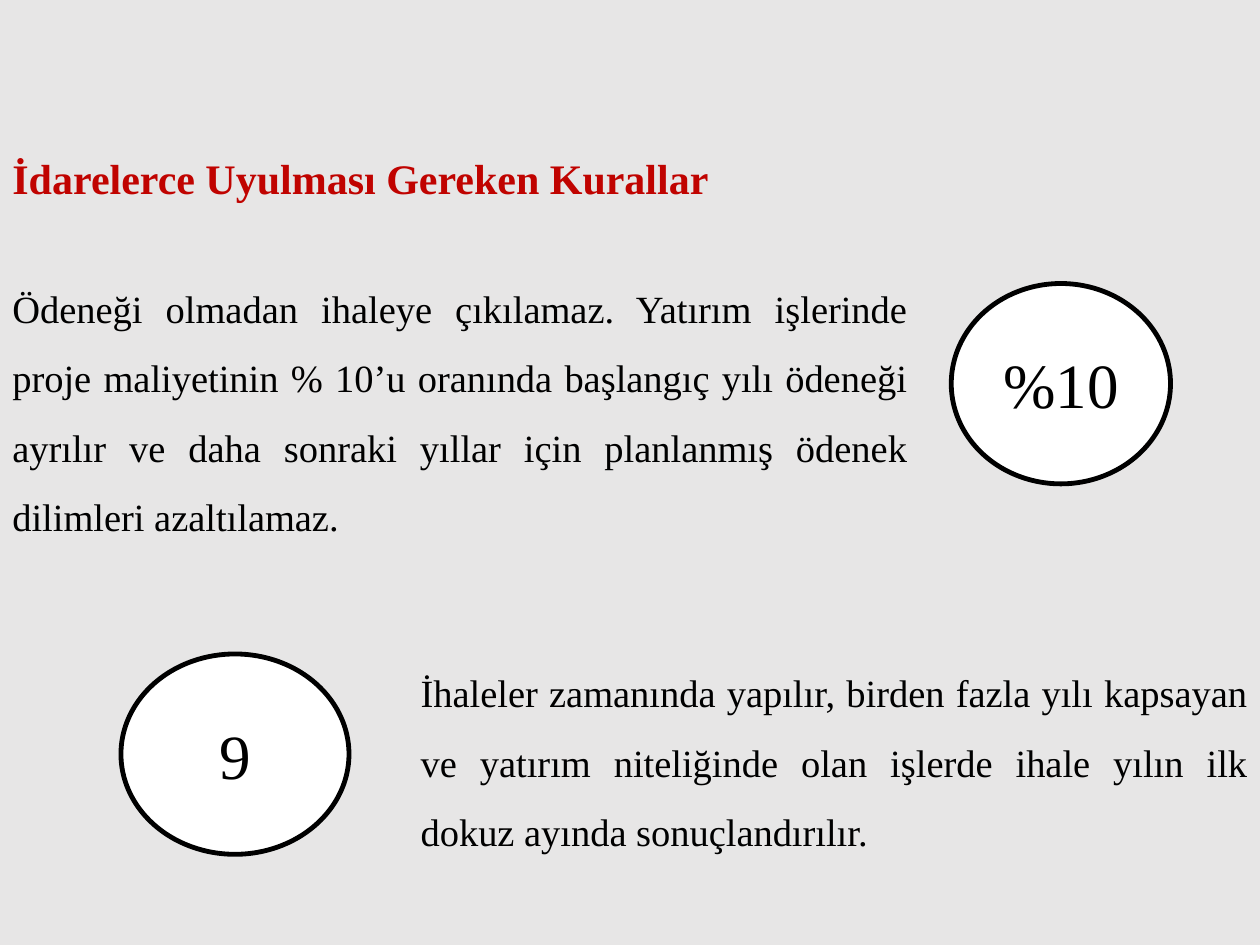
"""Build a slide on the budget and timing rules that public tenders must follow."""
from dataclasses import dataclass

from pptx import Presentation
from pptx import util as u
from pptx.dml.color import RGBColor
from pptx.enum import shapes, text


@dataclass(frozen=True)
class Theme:
    """Colours, font and type sizes of the slide."""
    background: str = "E7E6E6"
    ink: str = "000000"
    accent: str = "C00300"
    badge: str = "FFFFFF"
    font: str = "Times New Roman"
    title_size: float = 24
    body_size: float = 22
    badge_size: float = 36
    outline: float = 2.75


class RuleSlide:
    """Draw titles, rules and badges placed in percent of the slide."""

    def __init__(self, deck, theme):
        """Add a blank slide with the theme background."""
        self.deck, self.theme = deck, theme
        self.slide = deck.slides.add_slide(deck.slide_layouts[6])
        self.paint(self.slide.background.fill, theme.background)

    def paint(self, fill, colour):
        """Give a fill one solid colour."""
        fill.solid()
        fill.fore_color.rgb = RGBColor.from_string(colour)

    def area(self, left, top, width, height):
        """Turn percentages into slide lengths."""
        across, down = self.deck.slide_width, self.deck.slide_height
        return [u.Emu(round(share * side / 100)) for share, side in
                zip((left, top, width, height), (across, down, across, down))]

    def set_wording(self, shape, wording, size, colour, align, anchor, spacing=1.0, bold=False):
        """Fill a shape with one styled paragraph."""
        frame = shape.text_frame
        frame.text = wording
        frame.word_wrap = True
        frame.vertical_anchor = anchor
        paragraph = frame.paragraphs[0]
        paragraph.alignment = align
        paragraph.line_spacing = spacing
        for run in paragraph.runs:
            run.font.name = self.theme.font
            run.font.size = u.Pt(size)
            run.font.bold = bold
            run.font.color.rgb = RGBColor.from_string(colour)

    def title(self, wording, *place):
        """Add the red heading."""
        heading = self.slide.shapes.add_textbox(*self.area(*place))
        self.set_wording(heading, wording, self.theme.title_size, self.theme.accent,
                         text.PP_ALIGN.LEFT, text.MSO_ANCHOR.MIDDLE, 0.9, True)

    def rule(self, wording, *place):
        """Add a justified rule."""
        rule = self.slide.shapes.add_textbox(*self.area(*place))
        self.set_wording(rule, wording, self.theme.body_size, self.theme.ink,
                         text.PP_ALIGN.JUSTIFY, text.MSO_ANCHOR.TOP, 1.5)

    def badge(self, figure, *place):
        """Add an outlined oval holding a key figure."""
        oval = self.slide.shapes.add_shape(shapes.MSO_SHAPE.OVAL, *self.area(*place))
        oval.shadow.inherit = False
        self.paint(oval.fill, self.theme.badge)
        self.paint(oval.line.fill, self.theme.ink)
        oval.line.width = u.Pt(self.theme.outline)
        self.set_wording(oval, figure, self.theme.badge_size, self.theme.ink,
                         text.PP_ALIGN.CENTER, text.MSO_ANCHOR.MIDDLE)


def main():
    """Compose and save the slide."""
    deck = Presentation()
    deck.slide_width, deck.slide_height = u.Inches(10), u.Inches(7.5)
    page = RuleSlide(deck, Theme())
    page.rule("Ödeneği olmadan ihaleye çıkılamaz. Yatırım işlerinde proje maliyetinin "
              "% 10’u oranında başlangıç yılı ödeneği ayrılır ve daha sonraki yıllar için "
              "planlanmış ödenek dilimleri azaltılamaz.", 0, 27.07, 73, 38.67)
    page.badge("%10", 75.5, 30, 17.4, 21.2)
    page.badge("9", 9.6, 69.2, 18.1, 21.2)
    page.rule("İhaleler zamanında yapılır, birden fazla yılı kapsayan ve yatırım "
              "niteliğinde olan işlerde ihale yılın ilk dokuz ayında sonuçlandırılır.",
              32.4, 67.73, 67.6, 23.6)
    page.title("İdarelerce Uyulması Gereken Kurallar", 0, 16, 90.5, 6.27)
    deck.save("out.pptx")


if __name__ == "__main__":
    main()
